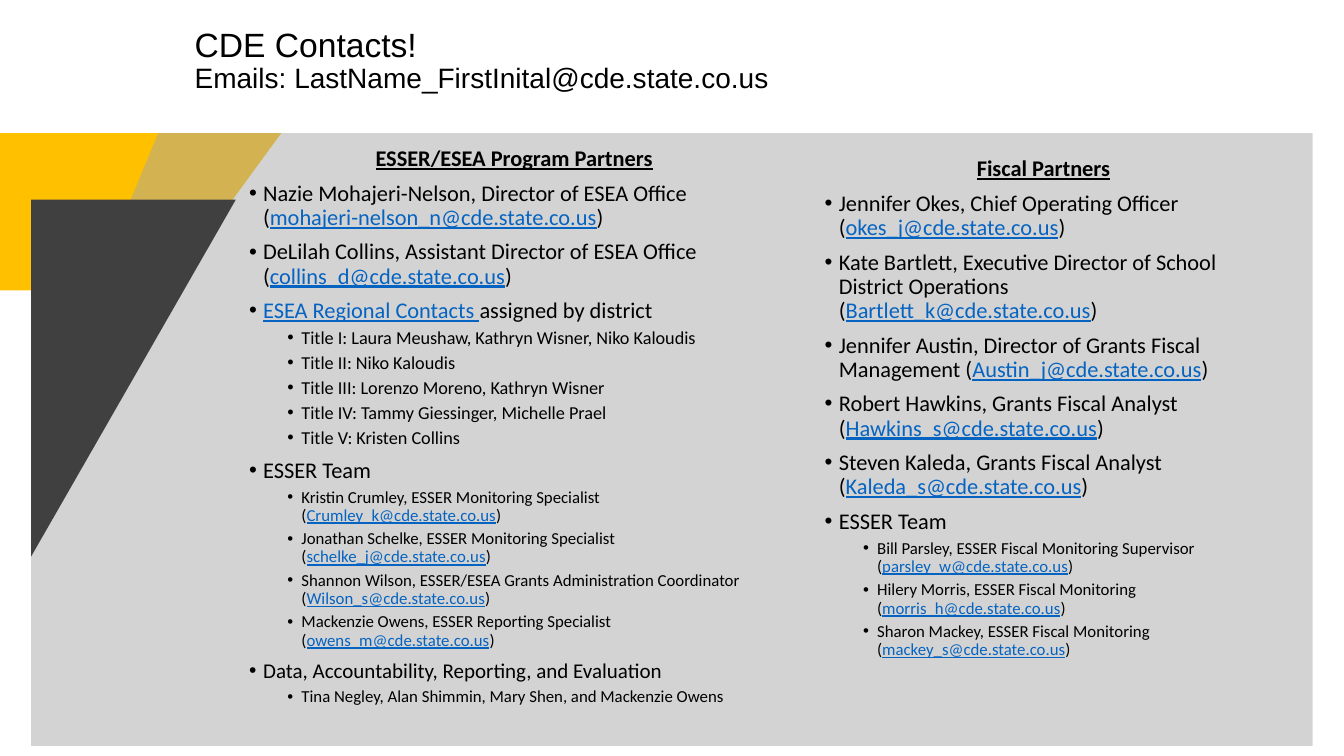
from dataclasses import dataclass

from lxml.etree import SubElement
from pptx import Presentation
from pptx.dml.color import RGBColor
from pptx.enum.text import PP_ALIGN
from pptx.oxml.ns import qn
from pptx.slide import Slide
from pptx.text.text import _Paragraph
from pptx.util import Inches, Pt

BLACK = RGBColor(0x00, 0x00, 0x00)
LINK = RGBColor(0x05, 0x63, 0xC1)
YELLOW = RGBColor(0xFF, 0xC0, 0x00)
GRAY = RGBColor(0xA6, 0xA6, 0xA6)
CHARCOAL = RGBColor(0x40, 0x40, 0x40)
HANGING = 0.14


@dataclass
class Panel:
    points: list[tuple[float, float]]
    color: RGBColor
    opacity: int = 100


@dataclass
class Line:
    """One paragraph; text between | marks is styled as a link."""
    text: str
    size: int = 16
    level: int = 0
    heading: bool = False
    bullet: bool = True
    font: str = "Calibri"


@dataclass
class TextBlock:
    box: tuple[float, float, float, float]
    lines: list[Line]


PANELS = [
    Panel([(0, 1.32), (2.79, 1.32), (1.65, 2.88), (0, 2.88)], YELLOW),
    Panel([(1.57, 1.32), (13.02, 1.32), (13.02, 7.4), (0.31, 7.4),
           (0.31, 4.38), (1.21, 2.19)], GRAY, 49),
    Panel([(0.31, 1.98), (2.34, 1.98), (0.31, 5.52)], CHARCOAL),
]

PROGRAM = TextBlock((2.47, 1.46, 5.26, 5.34), [
    Line("ESSER/ESEA Program Partners", heading=True, bullet=False),
    Line("Nazie Mohajeri-Nelson, Director of ESEA Office (|mohajeri-nelson_n@cde.state.co.us|)"),
    Line("DeLilah Collins, Assistant Director of ESEA Office (|collins_d@cde.state.co.us|)"),
    Line("|ESEA Regional Contacts |assigned by district"),
    Line("Title I: Laura Meushaw, Kathryn Wisner, Niko Kaloudis", 13, 1),
    Line("Title II: Niko Kaloudis", 13, 1),
    Line("Title III: Lorenzo Moreno, Kathryn Wisner", 13, 1),
    Line("Title IV: Tammy Giessinger, Michelle Prael", 13, 1),
    Line("Title V: Kristen Collins", 13, 1),
    Line("ESSER Team"),
    Line("Kristin Crumley, ESSER Monitoring Specialist (|Crumley_k@cde.state.co.us|)", 12, 1),
    Line("Jonathan Schelke, ESSER Monitoring Specialist (|schelke_j@cde.state.co.us|)", 12, 1),
    Line("Shannon Wilson, ESSER/ESEA Grants Administration Coordinator "
         "(|Wilson_s@cde.state.co.us|)", 12, 1),
    Line("Mackenzie Owens, ESSER Reporting Specialist (|owens_m@cde.state.co.us|)", 12, 1),
    Line("Data, Accountability, Reporting, and Evaluation", 15),
    Line("Tina Negley, Alan Shimmin, Mary Shen, and Mackenzie Owens", 12, 1),
])

TITLE = TextBlock((1.93, 0.28, 6.65, 0.83), [
    Line("CDE Contacts!", 24, bullet=False, font="Arial"),
    Line("Emails: LastName_FirstInital@cde.state.co.us", 20, bullet=False, font="Arial"),
])

FISCAL = TextBlock((8.18, 1.56, 4.34, 5.34), [
    Line("Fiscal Partners", heading=True, bullet=False),
    Line("Jennifer Okes, Chief Operating Officer (|okes_j@cde.state.co.us|)"),
    Line("Kate Bartlett, Executive Director of School District Operations "
         "(|Bartlett_k@cde.state.co.us|)"),
    Line("Jennifer Austin, Director of Grants Fiscal Management (|Austin_j@cde.state.co.us|)"),
    Line("Robert Hawkins, Grants Fiscal Analyst (|Hawkins_s@cde.state.co.us|)"),
    Line("Steven Kaleda, Grants Fiscal Analyst (|Kaleda_s@cde.state.co.us|)"),
    Line("ESSER Team"),
    Line("Bill Parsley, ESSER Fiscal Monitoring Supervisor (|parsley_w@cde.state.co.us|)", 12, 1),
    Line("Hilery Morris, ESSER Fiscal Monitoring (|morris_h@cde.state.co.us|)", 12, 1),
    Line("Sharon Mackey, ESSER Fiscal Monitoring (|mackey_s@cde.state.co.us|)", 12, 1),
])


def draw_panel(s: Slide, panel: Panel) -> None:
    start, *rest = [(Inches(x), Inches(y)) for x, y in panel.points]
    builder = s.shapes.build_freeform(*start)
    builder.add_line_segments(rest, close=True)
    sp = builder.convert_to_shape()
    sp.shadow.inherit = False
    sp.line.fill.background()
    sp.fill.solid()
    sp.fill.fore_color.rgb = panel.color
    if panel.opacity < 100:
        color = sp.fill._xPr.find(".//" + qn("a:srgbClr"))
        SubElement(color, qn("a:alpha"), val=str(panel.opacity * 1000))


def add_bullet(p: _Paragraph, level: int) -> None:
    pPr = p._p.get_or_add_pPr()
    pPr.set("marL", str(Inches(HANGING + 0.38 * level)))
    pPr.set("indent", str(-Inches(HANGING)))
    color = SubElement(pPr, qn("a:buClr"))
    SubElement(color, qn("a:srgbClr"), val=str(BLACK))
    SubElement(pPr, qn("a:buFont"), typeface="Arial")
    SubElement(pPr, qn("a:buChar"), char="•")
    p.level = level
    p.space_before = Pt(3.8 if level else 7.5)


def write_line(p: _Paragraph, line: Line) -> None:
    if line.bullet:
        add_bullet(p, line.level)
    p.line_spacing = 0.9
    p.alignment = PP_ALIGN.CENTER if line.heading else PP_ALIGN.LEFT
    for i, part in enumerate(line.text.split("|")):
        if not part:
            continue
        is_link = i % 2 == 1
        r = p.add_run()
        r.text = part
        r.font.color.rgb = LINK if is_link else BLACK
        style = {"name": line.font, "size": Pt(line.size), "bold": line.heading,
                 "underline": line.heading or is_link}
        for name, value in style.items():
            setattr(r.font, name, value)


def draw_text(s: Slide, block: TextBlock) -> None:
    tf = s.shapes.add_textbox(*map(Inches, block.box)).text_frame
    layout = {"word_wrap": True, "margin_left": 0, "margin_top": 0,
              "margin_right": 0, "margin_bottom": 0}
    for name, value in layout.items():
        setattr(tf, name, value)
    for i, line in enumerate(block.lines):
        write_line(tf.add_paragraph() if i else tf.paragraphs[0], line)


def main() -> None:
    prs = Presentation()
    prs.slide_width, prs.slide_height = Inches(13.33), Inches(7.5)
    s = prs.slides.add_slide(prs.slide_layouts[6])
    for panel in PANELS:
        draw_panel(s, panel)
    for block in (PROGRAM, TITLE, FISCAL):
        draw_text(s, block)
    prs.save("out.pptx")


if __name__ == "__main__":
    main()
